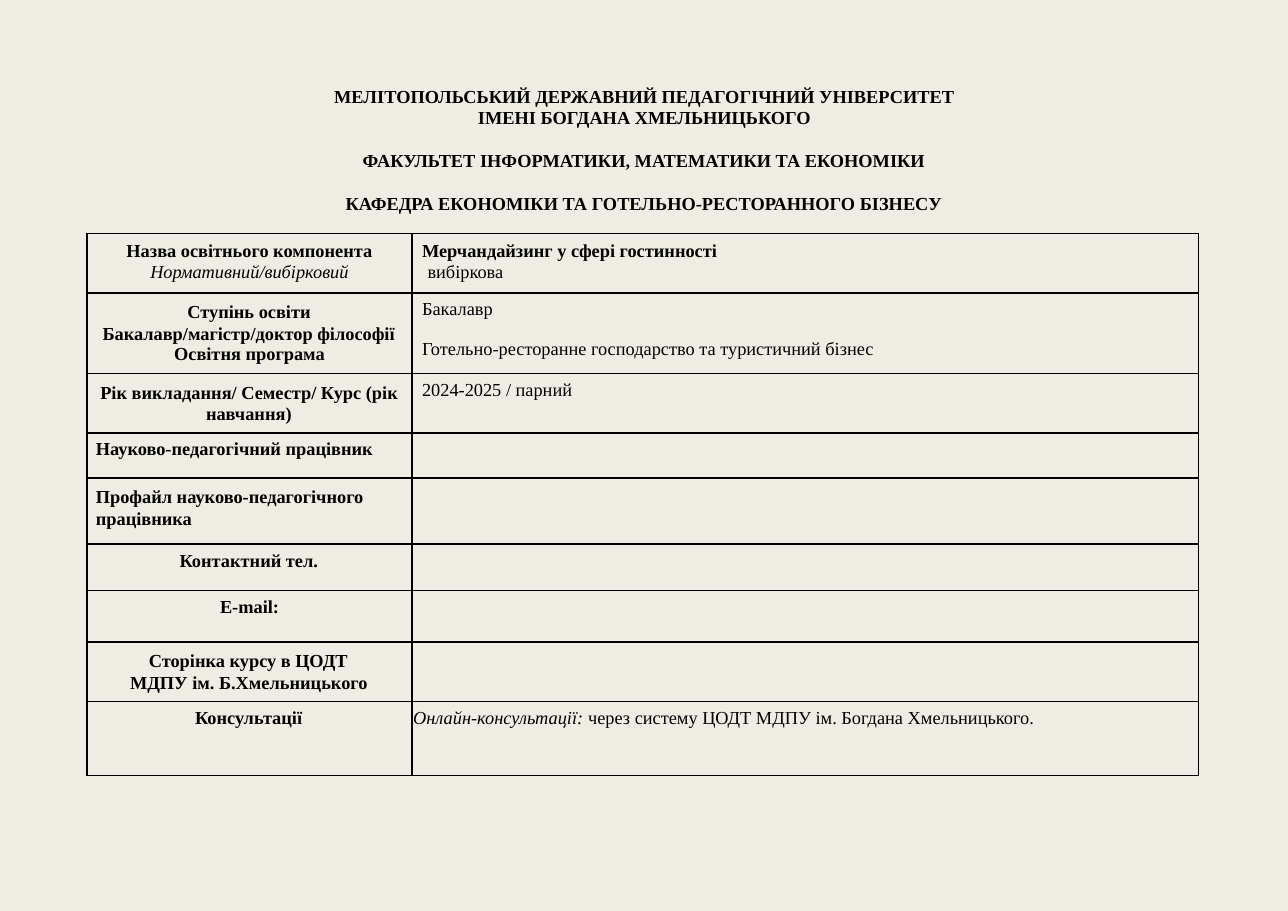
from dataclasses import dataclass

from lxml import etree
from pptx import Presentation
from pptx.dml.color import RGBColor
from pptx.enum import text as txt
from pptx.oxml import ns
from pptx.util import Inches, Pt

PAPER = RGBColor(0xEF, 0xED, 0xE3)
INK = RGBColor(0x00, 0x00, 0x00)
FONT = "Times New Roman"
CENTER = txt.PP_ALIGN.CENTER
LEFT = txt.PP_ALIGN.LEFT


@dataclass
class Line:
    """One paragraph: left margin and first-line indent in inches, spacing in points."""
    text: str
    bold: bool = False
    italic: bool = False
    align: int = LEFT
    margin: float = 0
    first: float = 0
    before: float = 0
    spacing: float = 0
    tail: str = ""  # plain text after the styled part


HEADING = [
    Line("МЕЛІТОПОЛЬСЬКИЙ ДЕРЖАВНИЙ ПЕДАГОГІЧНИЙ УНІВЕРСИТЕТ\vІМЕНІ БОГДАНА ХМЕЛЬНИЦЬКОГО",
         bold=True, align=CENTER, margin=0.01, before=1.9, spacing=13.8),
    Line("ФАКУЛЬТЕТ ІНФОРМАТИКИ, МАТЕМАТИКИ ТА ЕКОНОМІКИ\v"
         "КАФЕДРА ЕКОНОМІКИ ТА ГОТЕЛЬНО-РЕСТОРАННОГО БІЗНЕСУ",
         bold=True, align=CENTER, before=0.8, spacing=27.6),
]

COLUMN_WIDTHS = [2.95, 7.14]

# Each row: height, top inset of the label, label lines, value lines
ROWS = [
    (0.54, 0.06,
     [Line("Назва освітнього компонента", bold=True, align=CENTER, before=4.5, spacing=14),
      Line("Нормативний/вибірковий", italic=True, align=CENTER, spacing=14)],
     [Line("Мерчандайзинг у сфері гостинності", bold=True, margin=0.09, before=4.5, spacing=14),
      Line("вибіркова", margin=0.14, spacing=14)]),
    (0.73, 0.08,
     [Line("Ступінь освіти\vБакалавр/магістр/доктор філософії", bold=True,
           margin=0.14, first=0.77, before=5.5, spacing=13.8),
      Line("Освітня програма", bold=True, margin=0.79, spacing=13.4)],
     [Line("Бакалавр", margin=0.09, before=4.3),
      Line("Готельно-ресторанне господарство та туристичний бізнес", margin=0.09, before=12.6)]),
    (0.54, 0.08,
     [Line("Рік викладання/ Семестр/ Курс (рік\vнавчання)", bold=True,
           margin=1.08, first=-0.96, before=5.5, spacing=13.8)],
     [Line("2024-2025 / парний", margin=0.09, before=4.3)]),
    (0.41, 0.06,
     [Line("Науково-педагогічний працівник", bold=True, margin=0.08, before=4.5)], []),
    (0.6, 0.08,
     [Line("Профайл науково-педагогічного\vпрацівника", bold=True,
           margin=0.08, before=5.5, spacing=13.8)], []),
    (0.42, 0.06, [Line("Контактний тел.", bold=True, margin=0.84, before=4.5)], []),
    (0.47, 0.06, [Line("E-mail:", bold=True, align=CENTER, before=4.5)], []),
    (0.54, 0.08,
     [Line("Сторінка курсу в ЦОДТ\vМДПУ ім. Б.Хмельницького", bold=True,
           margin=0.39, first=0.17, before=5.5, spacing=13.8)], []),
    (0.67, 0.06,
     [Line("Консультації", bold=True, margin=0.98, before=4.5)],
     [Line("Онлайн-консультації: ", italic=True, margin=0.01, before=4.3,
           tail="через систему ЦОДТ МДПУ ім. Богдана Хмельницького.")]),
]


def style_run(run, bold=False, italic=False):
    run.font.name = FONT
    run.font.size = Pt(12)
    run.font.color.rgb = INK
    run.font.bold = bold
    run.font.italic = italic


def write_lines(frame, lines):
    for index, line in enumerate(lines):
        paragraph = frame.paragraphs[0] if index == 0 else frame.add_paragraph()
        paragraph.text = line.text
        for run in paragraph.runs:
            style_run(run, line.bold, line.italic)
        if line.tail:
            tail = paragraph.add_run()
            tail.text = line.tail
            style_run(tail)
        paragraph.alignment = line.align
        paragraph.space_before = Pt(line.before)
        if line.spacing:
            paragraph.line_spacing = Pt(line.spacing)
        properties = paragraph._p.get_or_add_pPr()
        properties.set("marL", str(Inches(line.margin)))
        properties.set("indent", str(Inches(line.first)))


def draw_borders(cell):
    properties = cell._tc.get_or_add_tcPr()
    for side in ("a:lnL", "a:lnR", "a:lnT", "a:lnB"):
        border = etree.SubElement(properties, ns.qn(side), w=str(Pt(1)))
        fill = etree.SubElement(border, ns.qn("a:solidFill"))
        etree.SubElement(fill, ns.qn("a:srgbClr"), val=str(INK))


def fill_cell(cell, lines, top_inset=0.06):
    draw_borders(cell)
    cell.fill.background()
    cell.margin_left = cell.margin_right = cell.margin_bottom = 0
    cell.margin_top = Inches(top_inset)
    write_lines(cell.text_frame, lines)


def add_heading(slide):
    heading = slide.shapes.title
    heading.left, heading.top = Inches(3), Inches(0.75)
    heading.width, heading.height = Inches(5.69), Inches(1.19)
    frame = heading.text_frame
    frame.word_wrap = True
    frame.auto_size = txt.MSO_AUTO_SIZE.NONE
    frame.vertical_anchor = txt.MSO_ANCHOR.TOP
    frame.margin_left = frame.margin_right = frame.margin_bottom = 0
    frame.margin_top = Inches(0.03)
    write_lines(frame, HEADING)


def add_course_table(slide):
    course = slide.shapes.add_table(
        len(ROWS), len(COLUMN_WIDTHS), Inches(0.79), Inches(2.12),
        Inches(sum(COLUMN_WIDTHS)), Inches(sum(row[0] for row in ROWS))).table
    course.first_row = course.horz_banding = False
    for column, width in zip(course.columns, COLUMN_WIDTHS):
        column.width = Inches(width)
    for index, (height, label_inset, label, value) in enumerate(ROWS):
        course.rows[index].height = Inches(height)
        fill_cell(course.cell(index, 0), label, label_inset)
        fill_cell(course.cell(index, 1), value)


def main():
    syllabus = Presentation()
    syllabus.slide_width, syllabus.slide_height = Inches(11.69), Inches(8.27)
    slide = syllabus.slides.add_slide(syllabus.slide_layouts[5])

    # Background
    slide.background.fill.solid()
    slide.background.fill.fore_color.rgb = PAPER

    # University, faculty and department
    add_heading(slide)

    # Course details
    add_course_table(slide)

    syllabus.save("out.pptx")


if __name__ == "__main__":
    main()
